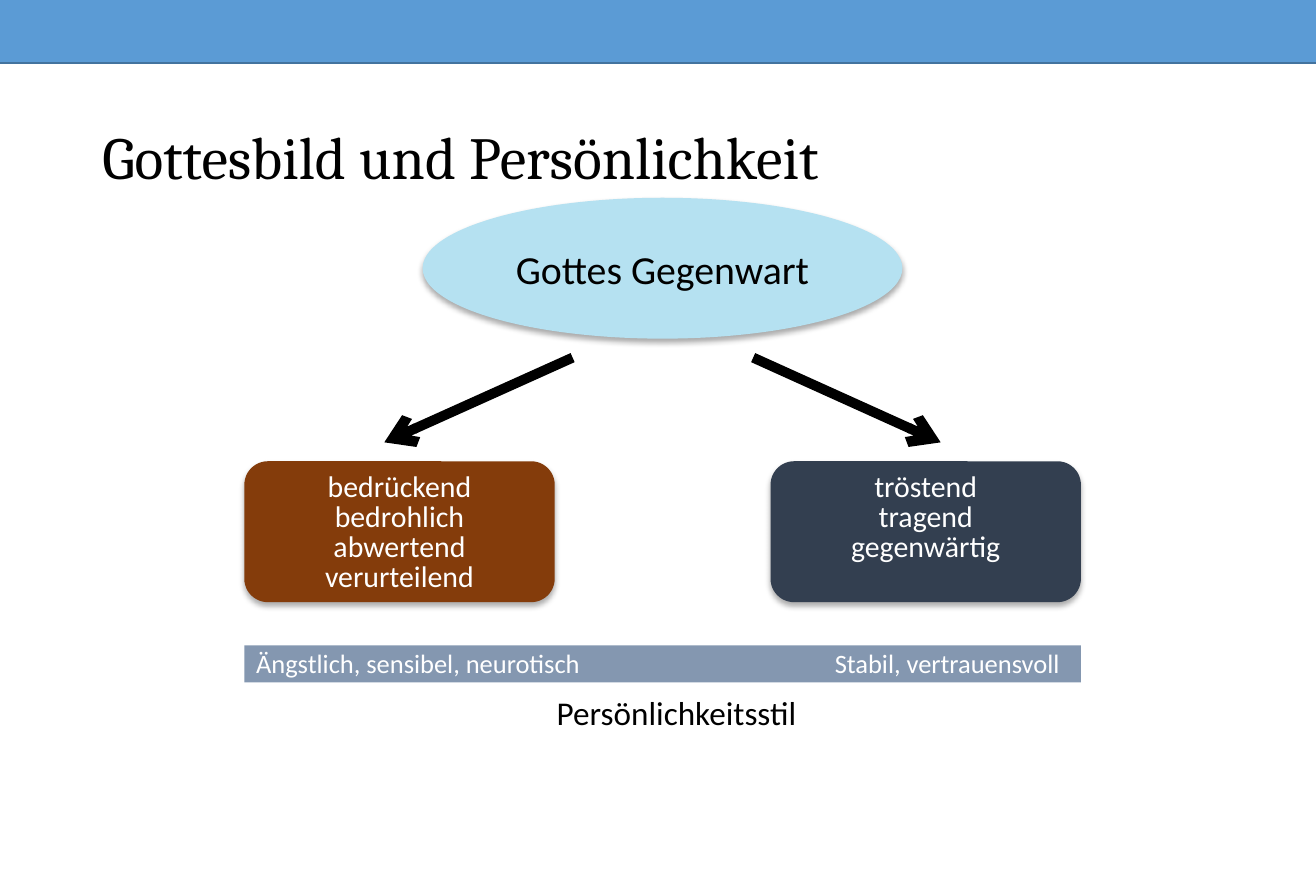
import pptx
import pptx.util
import pptx.dml.color
import pptx.enum.shapes
import pptx.enum.text
import pptx.oxml
import pptx.oxml.ns

Pt = pptx.util.Pt
RGBColor = pptx.dml.color.RGBColor
Shape = pptx.enum.shapes.MSO_SHAPE
Align = pptx.enum.text.PP_ALIGN
Anchor = pptx.enum.text.MSO_ANCHOR
qn = pptx.oxml.ns.qn

BLACK = RGBColor(0x00, 0x00, 0x00)
WHITE = RGBColor(0xFF, 0xFF, 0xFF)
BAND_BLUE = RGBColor(0x5B, 0x9B, 0xD5)
BAND_EDGE = RGBColor(0x43, 0x73, 0x9E)
SKY = RGBColor(0xB5, 0xE1, 0xF1)
BROWN = RGBColor(0x84, 0x3C, 0x0B)
SLATE = RGBColor(0x33, 0x3F, 0x50)
BAR_GREY = RGBColor(0x84, 0x97, 0xB0)

BOX_LEFT, BOX_WIDTH, BOX_HEIGHT = 147.4, 187.2, 85
BAR_WIDTH = 504.6
NAMESPACE = pptx.oxml.ns.nsdecls("a")
SHADOW = (
    f'<a:outerShdw {NAMESPACE} blurRad="{Pt(3.5)}" dist="{Pt(2.2)}" dir="5400000" '
    'algn="t" rotWithShape="0"><a:srgbClr val="000000"><a:alpha val="32000"/>'
    '</a:srgbClr></a:outerShdw>'
)


def add_filled(kind, left, top, width, height, fill, shadow=False):
    shape = page.shapes.add_shape(kind, Pt(left), Pt(top), Pt(width), Pt(height))
    shape.fill.solid()
    shape.fill.fore_color.rgb = fill
    shape.line.fill.background()
    shape.shadow.inherit = False
    if shadow:
        effects = shape._element.spPr.find(qn("a:effectLst"))
        effects.append(pptx.oxml.parse_xml(SHADOW))
    return shape


def write(shape, text, size, color, align, font="Calibri", spacing=None):
    frame = shape.text_frame
    frame.word_wrap = True
    frame.text = text
    for para in frame.paragraphs:
        para.alignment = align
        para.line_spacing = spacing
        for span in para.runs:
            span.font.name = font
            span.font.size = Pt(size)
            span.font.color.rgb = color


deck = pptx.Presentation()
deck.slide_width = Pt(793.75)
deck.slide_height = Pt(540)
page = deck.slides.add_slide(deck.slide_layouts[5])

band = add_filled(Shape.RECTANGLE, -17.3, -7.2, 835.2, 45.3, BAND_BLUE)
band.line.color.rgb = BAND_EDGE
band.line.width = Pt(1)

title = page.shapes.title
title.left, title.top, title.width, title.height = Pt(54.6), Pt(60.5), Pt(684.7), Pt(72.7)
write(title, "Gottesbild und Persönlichkeit", 36, BLACK, Align.LEFT, "Cambria", 0.9)
title.text_frame.auto_size = pptx.enum.text.MSO_AUTO_SIZE.NONE
title.text_frame.vertical_anchor = Anchor.MIDDLE

presence = add_filled(Shape.OVAL, 254.9, 119.3, 289.4, BOX_HEIGHT, SKY, shadow=True)
write(presence, "Gottes Gegenwart", 24, BLACK, Align.CENTER)

for start, end in [(345.4, 231.8), (454.3, 567.4)]:
    arrow = page.shapes.add_connector(
        pptx.enum.shapes.MSO_CONNECTOR.STRAIGHT, Pt(start), Pt(215.8), Pt(end), Pt(266.9)
    )
    arrow.line.color.rgb = BLACK
    arrow.line.width = Pt(6)
    arrow.line._get_or_add_ln().append(
        pptx.oxml.parse_xml(f'<a:tailEnd {NAMESPACE} type="arrow"/>')
    )
    arrow._element.spPr.append(pptx.oxml.parse_xml(f"<a:effectLst {NAMESPACE}/>"))

images_of_god = [
    (BOX_LEFT, BROWN, "bedrückend\nbedrohlich\nabwertend\nverurteilend"),
    (BOX_LEFT + BAR_WIDTH - BOX_WIDTH, SLATE, "tröstend\ntragend\ngegenwärtig"),
]
for left, fill, words in images_of_god:
    box = add_filled(Shape.ROUNDED_RECTANGLE, left, 278.3, BOX_WIDTH, BOX_HEIGHT, fill, shadow=True)
    write(box, words, 18, WHITE, Align.CENTER, spacing=Pt(18))
    box.text_frame.vertical_anchor = Anchor.TOP

add_filled(Shape.RECTANGLE, BOX_LEFT, 389.4, BAR_WIDTH, 22.3, BAR_GREY)

labels = [
    ("Ängstlich, sensibel, neurotisch", BOX_LEFT, 387.1, 229.7, 26.6, 16, WHITE, Align.LEFT),
    ("Stabil, vertrauensvoll", 473.5, 387.1, 172.8, 26.6, 16, WHITE, Align.RIGHT),
    ("Persönlichkeitsstil", 300.4, 414, 215.3, 31.7, 20, BLACK, Align.CENTER),
]
for text, left, top, width, height, size, color, align in labels:
    label = page.shapes.add_textbox(Pt(left), Pt(top), Pt(width), Pt(height))
    write(label, text, size, color, align)

deck.save("out.pptx")
